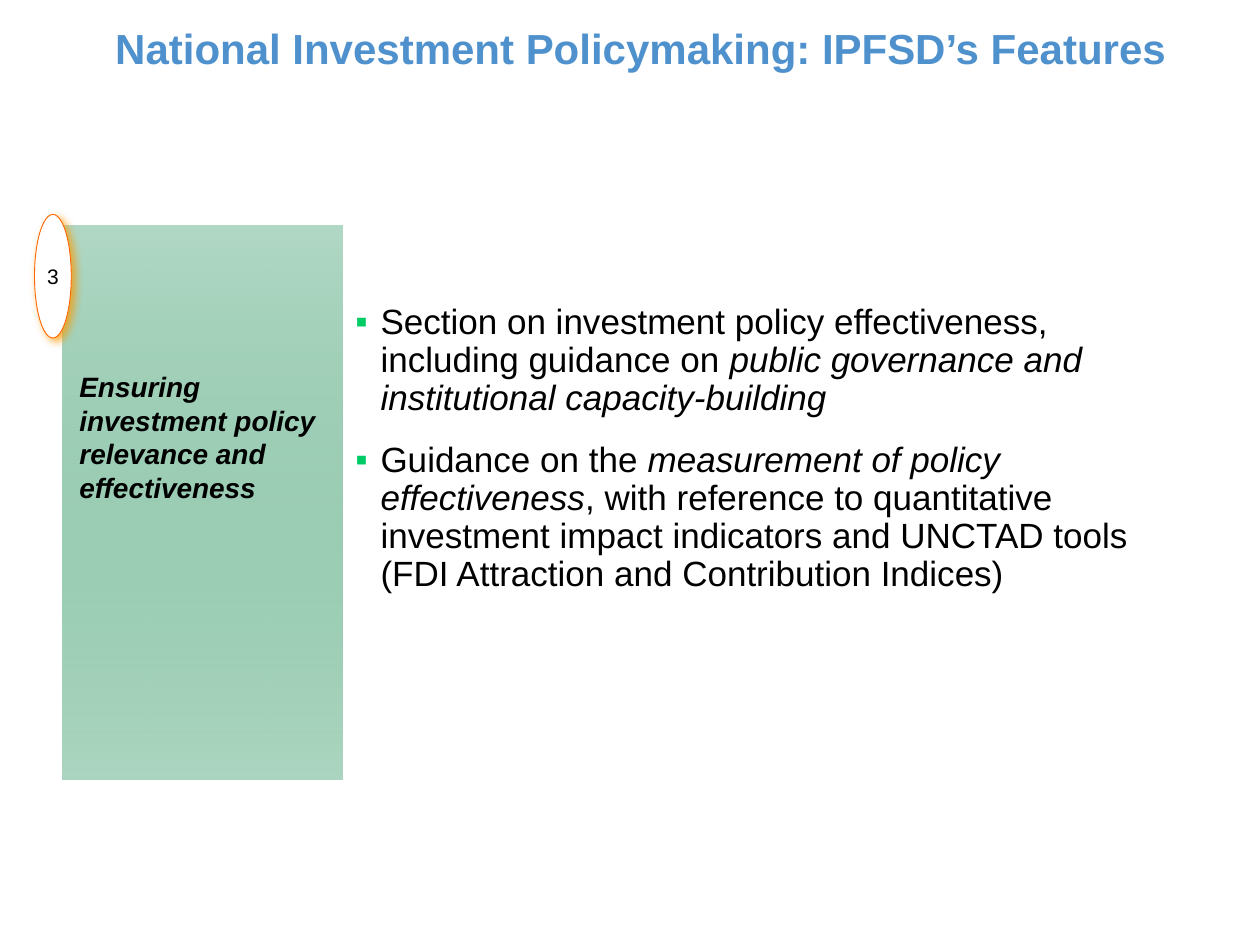
from dataclasses import dataclass

from lxml.etree import SubElement
from pptx import Presentation
from pptx.dml.color import RGBColor
from pptx.enum.shapes import MSO_SHAPE
from pptx.enum.text import MSO_ANCHOR, MSO_AUTO_SIZE, PP_ALIGN
from pptx.oxml.ns import qn
from pptx.util import Pt


@dataclass(frozen=True)
class Theme:
    font: str = "Arial"
    text: str = "000000"
    title: str = "4F91CD"
    bullet: str = "00CC66"
    panel_top: str = "339966"
    panel_bottom: str = "ABD5C0"
    badge_fill: str = "FFFFFF"
    badge_line: str = "FF6600"
    badge_shadow: str = "FF9900"
    title_size: int = 24
    body_size: int = 20
    label_size: int = 16
    badge_size: int = 12


THEME = Theme()
MARGINS = ("margin_left", "margin_top", "margin_right", "margin_bottom")


def color(value):
    return RGBColor.from_string(value)


def set_attributes(target, values):
    for name, value in values.items():
        setattr(target, name, value)


def add_element(parent, tag, **attributes):
    return SubElement(parent, qn(tag), {key: str(value) for key, value in attributes.items()})


def add_run(paragraph, text, size, text_color=THEME.text, **styles):
    run = paragraph.add_run()
    run.text = text
    set_attributes(run.font, {"name": THEME.font, "size": Pt(size), **styles})
    run.font.color.rgb = color(text_color)


def add_text_frame(slide, box, **values):
    frame = slide.shapes.add_textbox(*map(Pt, box)).text_frame
    set_attributes(frame, {"word_wrap": True, "auto_size": MSO_AUTO_SIZE.NONE, **values})
    return frame


def add_title(slide, box, text):
    paragraph = add_text_frame(slide, box, word_wrap=False).paragraphs[0]
    paragraph.alignment = PP_ALIGN.CENTER
    add_run(paragraph, text, THEME.title_size, THEME.title, bold=True)


def add_topic_panel(slide, box, text):
    left, top, width, height = box
    panel = slide.shapes.add_shape(MSO_SHAPE.RECTANGLE, *map(Pt, box))
    panel.shadow.inherit = False
    panel.line.fill.background()

    # Gradient running downwards from a translucent green
    panel.fill.gradient()
    panel.fill.gradient_angle = 270
    stops = zip(panel.fill.gradient_stops, (THEME.panel_top, THEME.panel_bottom), (0, 1))
    for stop, stop_color, position in stops:
        stop.color.rgb = color(stop_color)
        stop.position = position
    first_color = next(panel.element.spPr.iter(qn("a:srgbClr")))
    add_element(first_color, "a:alpha", val=38000)

    # Topic label
    label_box = (left + 9.4, top + 82.5, width - 8, 77)
    frame = add_text_frame(slide, label_box, **dict.fromkeys(MARGINS, 0))
    add_run(frame.paragraphs[0], text, THEME.label_size, bold=True, italic=True)


def add_badge(slide, box, text):
    badge = slide.shapes.add_shape(MSO_SHAPE.OVAL, *map(Pt, box))
    badge.fill.solid()
    badge.fill.fore_color.rgb = color(THEME.badge_fill)
    badge.line.color.rgb = color(THEME.badge_line)
    badge.line.width = Pt(0.5)

    # Orange shadow
    badge.shadow.inherit = False
    effects = badge.element.spPr.find(qn("a:effectLst"))
    shadow = add_element(effects, "a:outerShdw", blurRad=Pt(5), dist=Pt(3),
                         dir=45 * 60000, algn="ctr", rotWithShape=0)
    shadow_color = add_element(shadow, "a:srgbClr", val=THEME.badge_shadow)
    add_element(shadow_color, "a:alpha", val=75000)

    # Number
    frame = badge.text_frame
    set_attributes(frame, {"vertical_anchor": MSO_ANCHOR.MIDDLE,
                           **dict.fromkeys(MARGINS, Pt(2.9))})
    frame.paragraphs[0].alignment = PP_ALIGN.CENTER
    add_run(frame.paragraphs[0], text, THEME.badge_size)


def add_bullets(slide, box, items):
    frame = add_text_frame(slide, box)
    for index, parts in enumerate(items):
        paragraph = frame.add_paragraph() if index else frame.paragraphs[0]
        set_attributes(paragraph, {"line_spacing": 0.9, "space_after": Pt(10),
                                   "space_before": Pt(4 if index else 0)})
        properties = paragraph._p.get_or_add_pPr()
        properties.set("marL", str(Pt(14.4)))
        properties.set("indent", str(-Pt(14.4)))
        bullet_color = add_element(properties, "a:buClr")
        add_element(bullet_color, "a:srgbClr", val=THEME.bullet)
        add_element(properties, "a:buFont", typeface=THEME.font)
        add_element(properties, "a:buChar", char="▪")
        for text, italic in parts:
            add_run(paragraph, text, THEME.body_size, italic=italic)


def main():
    presentation = Presentation()
    set_attributes(presentation, {"slide_width": Pt(720), "slide_height": Pt(540)})
    slide = presentation.slides.add_slide(presentation.slide_layouts[6])

    add_topic_panel(slide, (36, 128.7, 160, 317),
                    "Ensuring investment policy relevance and effectiveness")
    add_bullets(slide, (196, 170.6, 485, 175.7), [
        [("Section on investment policy effectiveness, including guidance on ", False),
         ("public governance and institutional capacity-building", True)],
        [("Guidance on the ", False),
         ("measurement of policy effectiveness", True),
         (", with reference to quantitative investment impact indicators and "
          "UNCTAD tools (FDI Attraction and Contribution Indices)", False)],
    ])
    add_badge(slide, (19.7, 122.5, 21, 70.6), "3")
    add_title(slide, (58.3, 9.4, 615.6, 36),
              "National Investment Policymaking: IPFSD’s Features")

    presentation.save("out.pptx")


if __name__ == "__main__":
    main()
